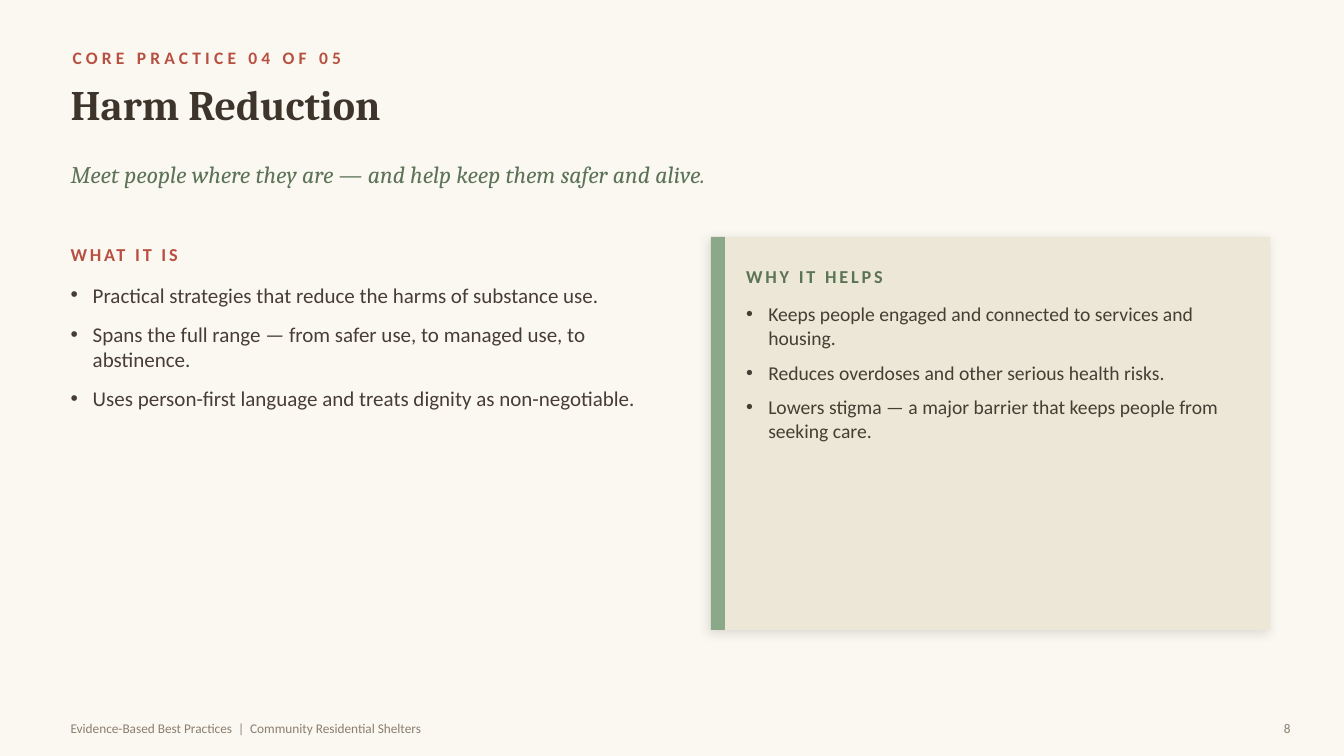
from lxml import etree
from pptx import Presentation
from pptx.dml.color import RGBColor
from pptx.enum.shapes import MSO_SHAPE
from pptx.enum.text import MSO_ANCHOR, MSO_AUTO_SIZE, PP_ALIGN
from pptx.oxml.ns import qn
from pptx.util import Pt

PX = 9144  # EMU per px, 100 px to the inch
TOP, MIDDLE = MSO_ANCHOR.TOP, MSO_ANCHOR.MIDDLE
LEFT, RIGHT = PP_ALIGN.LEFT, PP_ALIGN.RIGHT
RECTANGLE = MSO_SHAPE.RECTANGLE
NO_AUTOFIT = MSO_AUTO_SIZE.NONE
SANS, SERIF = "Calibri", "Cambria"
COLORS = {
    "background": "FBF8F2",
    "heading": "3D342C",
    "body": "473D34",
    "accent": "B85042",
    "green": "5C7357",
    "sage": "8BA888",
    "card": "ECE7D6",
    "footer": "8A7E6F",
}
MARGIN = 70
INDENT = 22

presentation = Presentation()
presentation.slide_width = 1333 * PX
presentation.slide_height = 750 * PX
slide = presentation.slides.add_slide(presentation.slide_layouts[5])
slide.background.fill.solid()
slide.background.fill.fore_color.rgb = RGBColor.from_string(COLORS["background"])


def write(shape, box, lines, size, color, font=SANS, bold=False, italic=False,
          spacing=0, anchor=MIDDLE, align=LEFT, bullet_gap=None):
    """Place a text shape, fill it with lines and format every run."""
    shape.left, shape.top, shape.width, shape.height = [length * PX for length in box]
    text_frame = shape.text_frame
    text_frame.text = "\n".join(lines)
    text_frame.word_wrap = True
    text_frame.auto_size = NO_AUTOFIT
    text_frame.vertical_anchor = anchor
    text_frame.margin_left = text_frame.margin_right = 0
    text_frame.margin_top = text_frame.margin_bottom = 0
    for paragraph in text_frame.paragraphs:
        paragraph.alignment = align
        if bullet_gap is not None:
            paragraph.space_after = Pt(bullet_gap)
            properties = paragraph._p.get_or_add_pPr()
            properties.set("marL", str(INDENT * PX))
            properties.set("indent", str(-INDENT * PX))
            etree.SubElement(properties, qn("a:buFont"), typeface="Arial")
            etree.SubElement(properties, qn("a:buChar"), char="•")
        for run in paragraph.runs:
            run.font.name = font
            run.font.size = Pt(size)
            run.font.bold = bold
            run.font.italic = italic
            run.font.color.rgb = RGBColor.from_string(COLORS[color])
            if spacing:
                run._r.get_or_add_rPr().set("spc", str(spacing * 100))


def add_text(box, lines, size, color, **style):
    write(slide.shapes.add_textbox(0, 0, 0, 0), box, lines, size, color, **style)


# Header
add_text((72, 42, 1150, 30), ["CORE PRACTICE 04 OF 05"], 12.5, "accent",
         bold=True, spacing=3)
write(slide.shapes.title, (MARGIN, 78, 1220, 90), ["Harm Reduction"], 30, "heading",
      font=SERIF, bold=True, anchor=TOP)
add_text((MARGIN, 158, 1190, 55),
         ["Meet people where they are — and help keep them safer and alive."],
         17, "green", font=SERIF, italic=True, anchor=TOP)

# Card with its accent bar
for width, color in ((555, "card"), (14, "sage")):
    panel = slide.shapes.add_shape(RECTANGLE, 705 * PX, 235 * PX, width * PX, 390 * PX)
    panel.fill.solid()
    panel.fill.fore_color.rgb = RGBColor.from_string(COLORS[color])
    panel.line.fill.background()
    panel.shadow.inherit = False
    if color == "card":
        effects = panel._element.spPr.find(qn("a:effectLst"))
        shadow = etree.SubElement(
            effects, qn("a:outerShdw"), blurRad=str(Pt(7)), dist=str(Pt(3)),
            dir=str(135 * 60000), algn="bl", rotWithShape="0")
        shadow_color = etree.SubElement(shadow, qn("a:srgbClr"), val=COLORS["heading"])
        etree.SubElement(shadow_color, qn("a:alpha"), val="14000")

# Two columns: heading and bullets
columns = [
    ("WHAT IT IS", "accent", (MARGIN, 235, 600, 35), (MARGIN, 280, 600, 260), 15, 10, [
        "Practical strategies that reduce the harms of substance use.",
        "Spans the full range — from safer use, to managed use, to abstinence.",
        "Uses person-first language and treats dignity as non-negotiable.",
    ]),
    ("WHY IT HELPS", "green", (740, 257, 495, 35), (740, 300, 490, 300), 14, 8, [
        "Keeps people engaged and connected to services and housing.",
        "Reduces overdoses and other serious health risks.",
        "Lowers stigma — a major barrier that keeps people from seeking care.",
    ]),
]
for heading, color, heading_box, list_box, size, gap, points in columns:
    add_text(heading_box, [heading], 13, color, bold=True, spacing=2)
    add_text(list_box, points, size, "body", anchor=TOP, bullet_gap=gap)

# Footer
add_text((MARGIN, 706, 1050, 32),
         ["Evidence-Based Best Practices  |  Community Residential Shelters"], 9.5, "footer")
add_text((1220, 706, 60, 32), ["8"], 9.5, "footer", align=RIGHT)

presentation.save("out.pptx")
